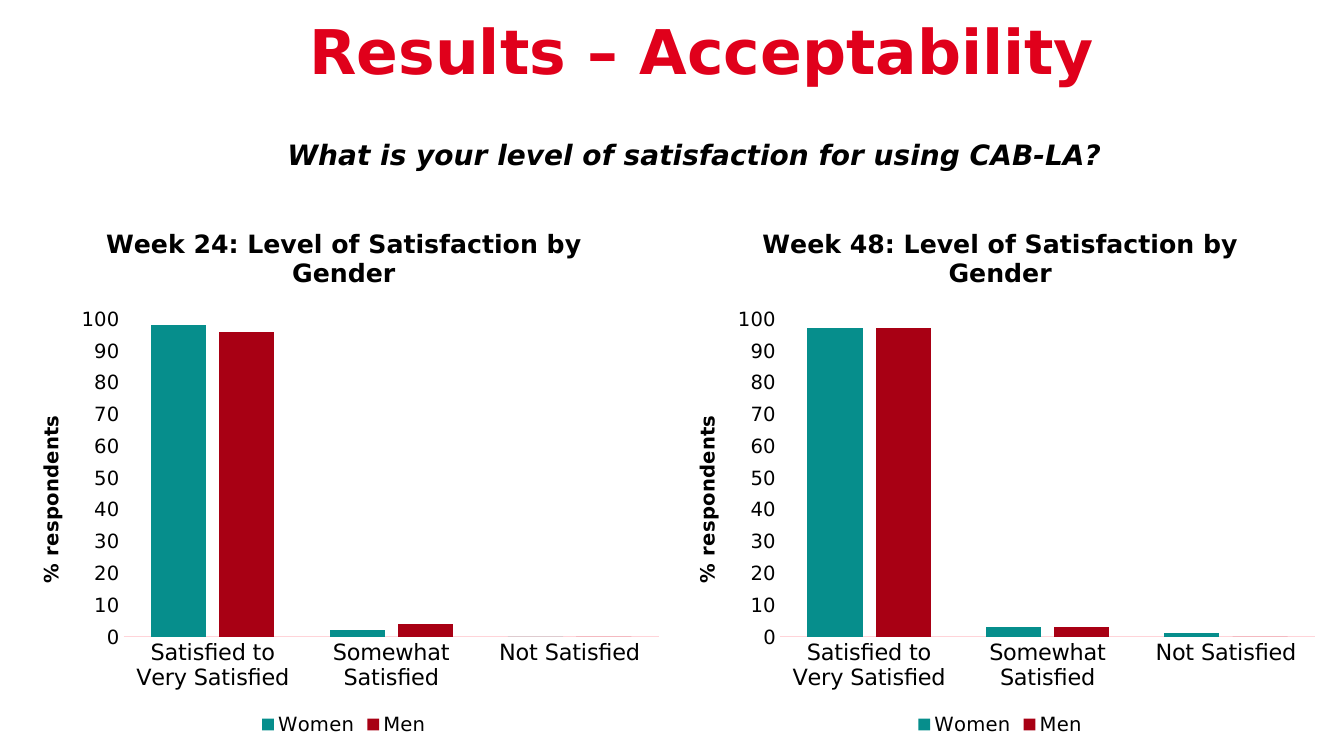
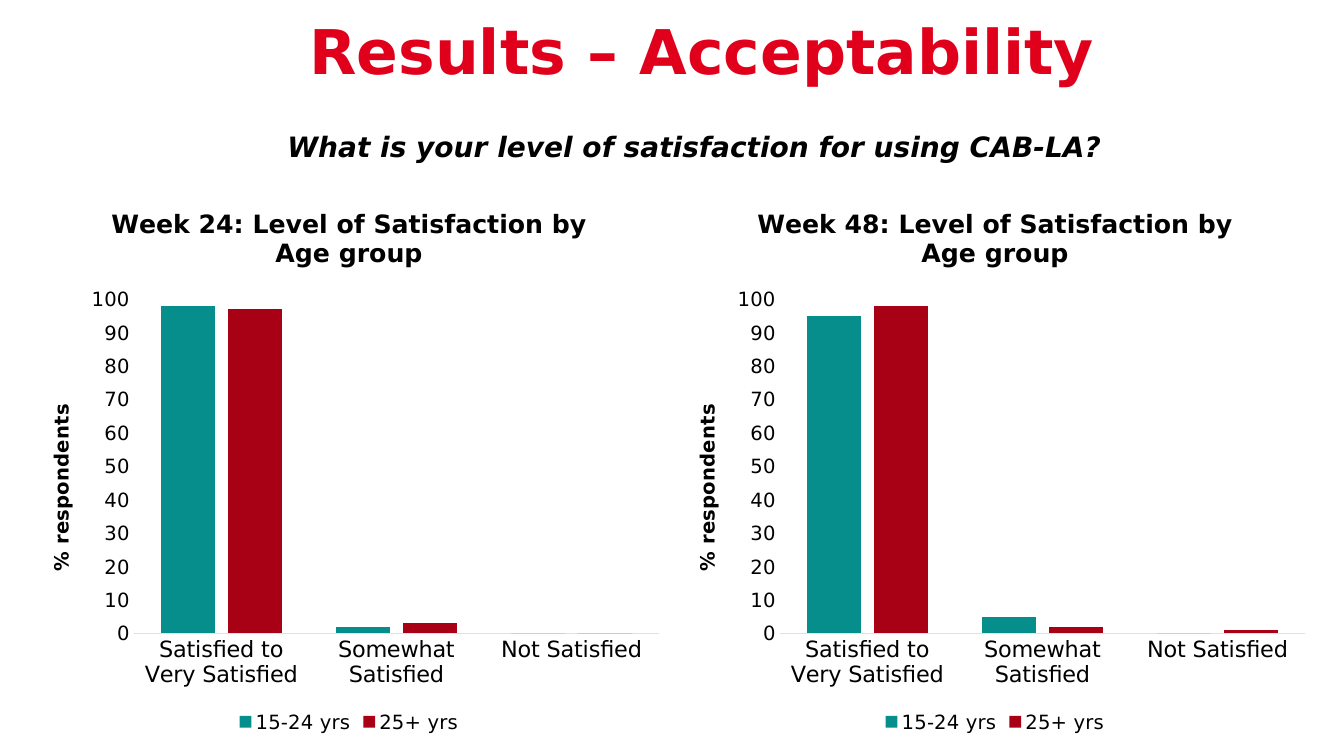
from dataclasses import dataclass

from pptx import Presentation
from pptx.chart.data import CategoryChartData
from pptx.dml.color import RGBColor
from pptx.enum.chart import XL_CHART_TYPE, XL_LEGEND_POSITION, XL_TICK_MARK
from pptx.enum.text import MSO_ANCHOR, MSO_AUTO_SIZE, PP_ALIGN
from pptx.util import Cm, Pt

COLUMNS = XL_CHART_TYPE.COLUMN_CLUSTERED
LEGEND_BOTTOM = XL_LEGEND_POSITION.BOTTOM
NO_TICKS = XL_TICK_MARK.NONE
TOP = MSO_ANCHOR.TOP
NO_AUTOFIT = MSO_AUTO_SIZE.NONE
GROW = MSO_AUTO_SIZE.SHAPE_TO_FIT_TEXT
LEFT = PP_ALIGN.LEFT

TITLE_ONLY = 5
WIDTH, HEIGHT = 33.87, 19.05
CENTER = WIDTH / 2
CATEGORIES = ("Satisfied to Very Satisfied", "Somewhat Satisfied", "Not Satisfied")


@dataclass(frozen=True)
class Theme:
    font: str = "DejaVu Sans"
    heading: RGBColor = RGBColor(0xE0, 0x00, 0x1B)
    text: RGBColor = RGBColor(0x00, 0x00, 0x00)
    axis: RGBColor = RGBColor(0xFF, 0xD4, 0xD9)
    series: tuple = (RGBColor(0x06, 0x8E, 0x8C), RGBColor(0xA8, 0x00, 0x14))
    heading_size: int = 44
    question_size: int = 20
    chart_title_size: int = 18
    category_size: int = 16
    label_size: int = 14
    chart_size: int = 10


class Deck:
    def __init__(self, theme):
        self.theme = theme
        self.presentation = Presentation()
        self.presentation.slide_width = Cm(WIDTH)
        self.presentation.slide_height = Cm(HEIGHT)
        self.slide = None

    def style(self, font, size, bold=False, italic=False, color=None):
        font.name = self.theme.font
        font.size = Pt(size)
        font.bold = bold
        font.italic = italic
        font.color.rgb = color or self.theme.text

    def add_slide(self, title):
        layout = self.presentation.slide_layouts[TITLE_ONLY]
        self.slide = self.presentation.slides.add_slide(layout)
        shape = self.slide.shapes.title
        shape.left, shape.top = Cm(7.54), Cm(0.41)
        shape.width, shape.height = Cm(25.17), Cm(3.4)
        frame = shape.text_frame
        frame.text = title
        frame.vertical_anchor = TOP
        frame.auto_size = NO_AUTOFIT
        paragraph = frame.paragraphs[0]
        paragraph.alignment = LEFT
        paragraph.line_spacing = 0.9
        self.style(paragraph.runs[0].font, self.theme.heading_size, bold=True,
                   color=self.theme.heading)

    def add_question(self, text, top):
        shape = self.slide.shapes.add_textbox(Cm(6.99), Cm(top), Cm(21.62), Cm(1.12))
        frame = shape.text_frame
        frame.word_wrap = True
        frame.auto_size = GROW
        frame.text = text
        self.style(frame.paragraphs[0].runs[0].font, self.theme.question_size,
                   bold=True, italic=True)

    def set_heading(self, owner, text, size):
        frame = owner.text_frame
        frame.text = text
        self.style(frame.paragraphs[0].runs[0].font, size, bold=True)

    def add_chart(self, title, series, left, top, width, height):
        data = CategoryChartData()
        data.categories = CATEGORIES
        for name, values in series.items():
            data.add_series(name, values)
        chart = self.slide.shapes.add_chart(
            COLUMNS, Cm(left), Cm(top), Cm(width), Cm(height), data).chart
        self.style(chart.font, self.theme.chart_size)
        chart.has_title = True
        self.set_heading(chart.chart_title, title, self.theme.chart_title_size)
        chart.chart_title.include_in_layout = False
        self.format_columns(chart.plots[0])
        self.format_axes(chart)
        chart.has_legend = True
        chart.legend.position = LEGEND_BOTTOM
        chart.legend.include_in_layout = False
        self.style(chart.legend.font, self.theme.label_size)

    def format_columns(self, plot):
        plot.gap_width = 100
        plot.overlap = -24
        plot.vary_by_categories = False
        for series, color in zip(plot.series, self.theme.series):
            series.format.fill.solid()
            series.format.fill.fore_color.rgb = color

    def format_axes(self, chart):
        category, value = chart.category_axis, chart.value_axis
        for axis, size in ((category, self.theme.category_size),
                           (value, self.theme.label_size)):
            axis.major_tick_mark = axis.minor_tick_mark = NO_TICKS
            axis.has_major_gridlines = False
            self.style(axis.tick_labels.font, size)
        category.format.line.color.rgb = self.theme.axis
        category.format.line.width = Pt(0.75)
        value.format.line.fill.background()
        value.minimum_scale, value.maximum_scale = 0, 100
        value.major_unit = 10
        value.has_title = True
        self.set_heading(value.axis_title, "% respondents", self.theme.label_size)

    def add_results(self, grouping, weeks, question_top, chart_top, width, height):
        self.add_slide("Results – Acceptability")
        self.add_question("What is your level of satisfaction for using CAB-LA?",
                          question_top)
        for (week, series), left in zip(weeks.items(), (CENTER - width, CENTER)):
            self.add_chart(f"Week {week}: Level of Satisfaction by {grouping}",
                           series, left, chart_top, width, height)


def main():
    deck = Deck(Theme())
    deck.add_results(
        "Gender",
        {24: {"Women": (98, 2, 0), "Men": (96, 4, 0)},
         48: {"Women": (97, 3, 1), "Men": (97, 3, 0)}},
        question_top=3.33, chart_top=5.21, width=16.54, height=13.44)
    deck.add_results(
        "Age group",
        {24: {"15-24 yrs": (98, 2, 0), "25+ yrs": (97, 3, 0)},
         48: {"15-24 yrs": (95, 5, 0), "25+ yrs": (98, 2, 1)}},
        question_top=3.15, chart_top=4.7, width=16.28, height=13.88)
    deck.presentation.save("out.pptx")


if __name__ == "__main__":
    main()
